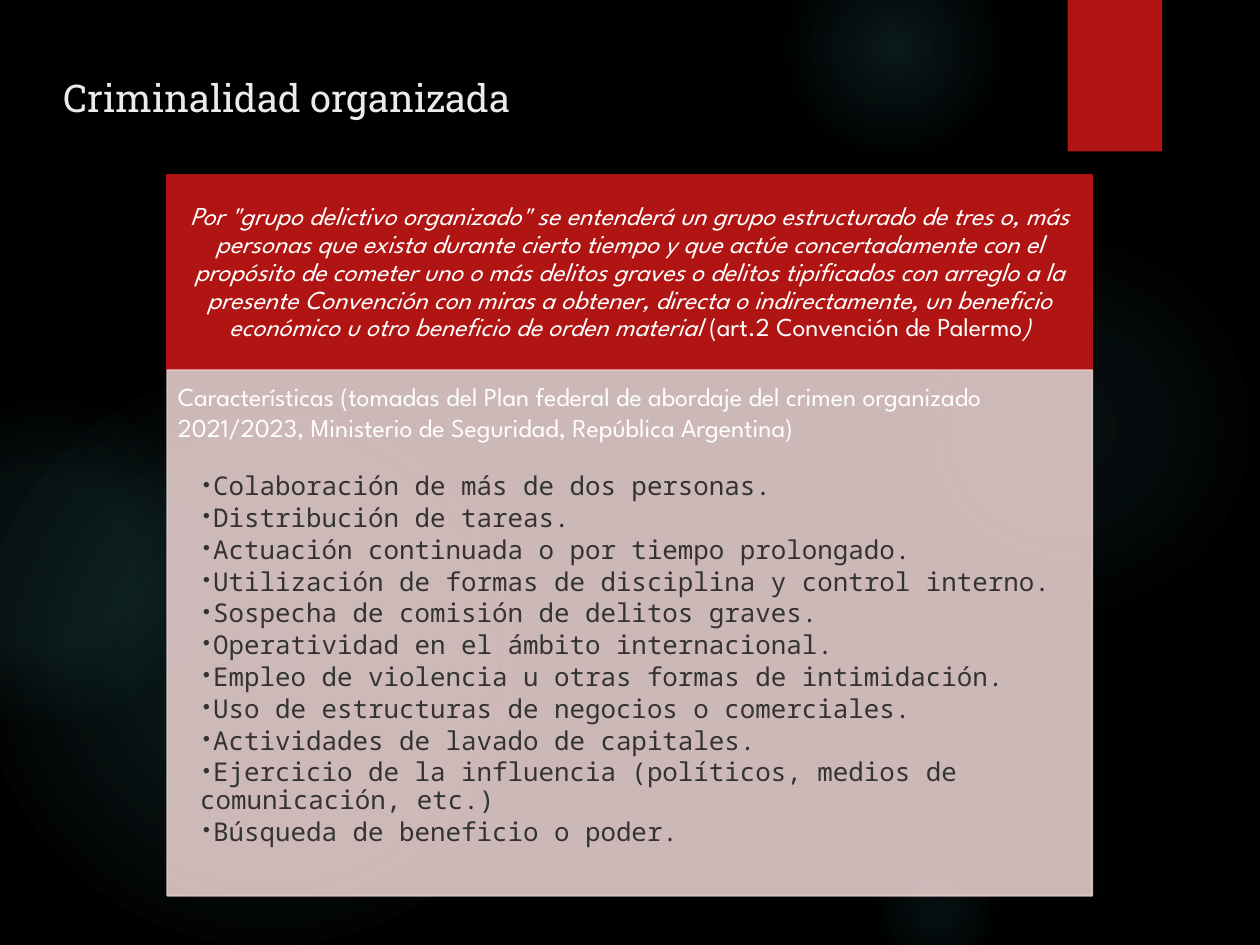
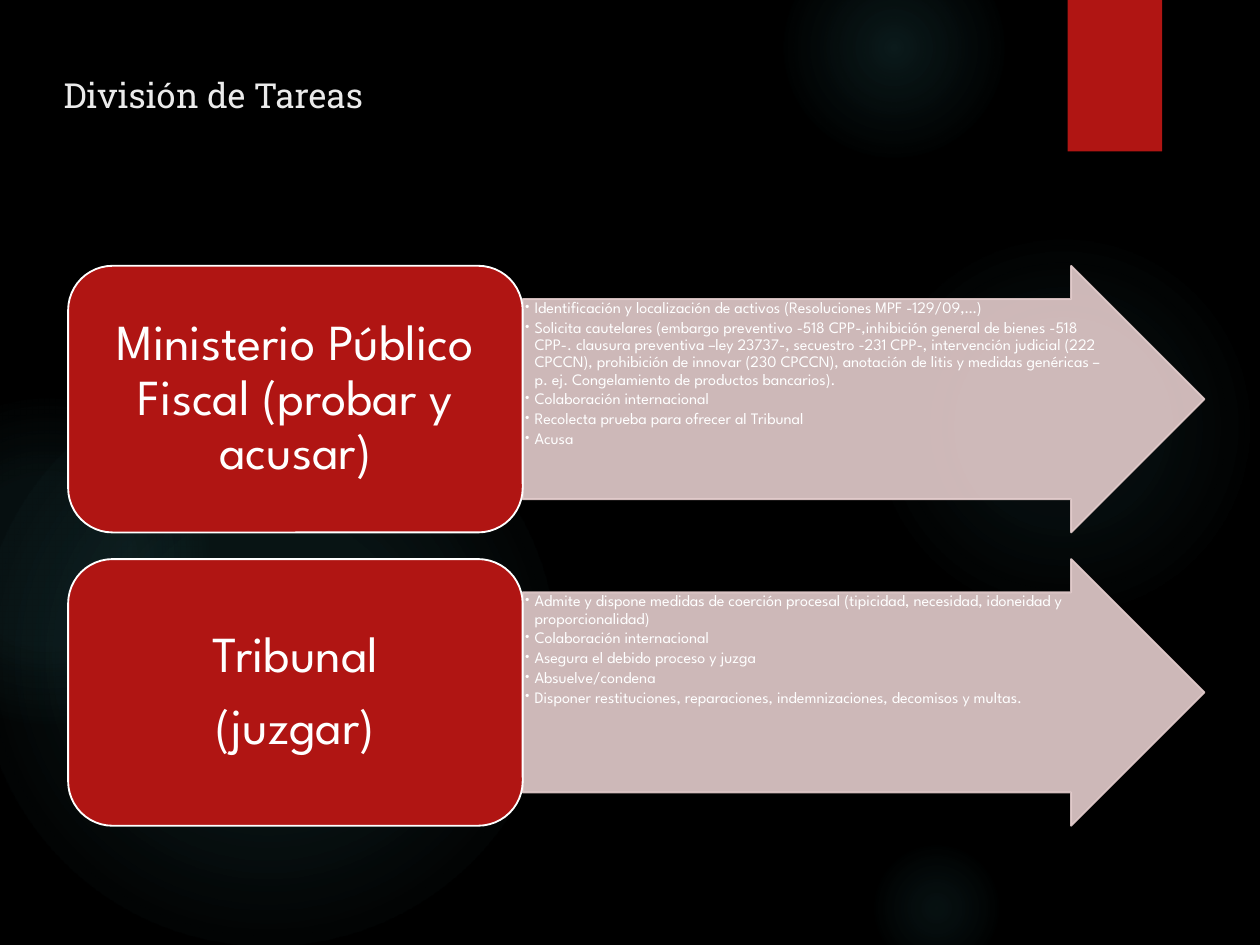
from pptx import Presentation
from pptx.dml.color import RGBColor
from pptx.enum.shapes import MSO_SHAPE
from pptx.enum.text import MSO_ANCHOR, PP_ALIGN
from pptx.oxml import parse_xml
from pptx.oxml.ns import nsdecls, qn
from pptx.oxml.xmlchemy import OxmlElement
from pptx.util import Pt

RECT, ROUNDED = MSO_SHAPE.RECTANGLE, MSO_SHAPE.ROUNDED_RECTANGLE
ELLIPSE, ARROW = MSO_SHAPE.OVAL, MSO_SHAPE.RIGHT_ARROW
TOP, MIDDLE = MSO_ANCHOR.TOP, MSO_ANCHOR.MIDDLE
LEFT, CENTER = PP_ALIGN.LEFT, PP_ALIGN.CENTER

BLACK, RED, PINK, TEAL = "000000", "B01513", "E4CCCC", "50B9C1"
WHITE, TITLE_GREY, DARK = "FFFFFF", "EBEBEB", "333333"
SPARTAN, MONO, SLAB = "League Spartan", "Noto Sans Mono", "Roboto Slab"

GLOWS = [
    (705.6, 188, 316, [(0, 7), (36, 6), (69, 0)]),
    (637, -51, 179, [(0, 14), (36, 7), (73, 0)]),
    (705.6, 682.6, 111, [(0, 9), (36, 5), (66, 0)]),
    (-17, 299, 469.5, [(0, 11), (36, 10), (75, 0)]),
    (-94, 324, 264, [(0, 8), (36, 8), (72, 0)]),
]

DEFINITION = [
    ('Por "grupo delictivo organizado" se entenderá un grupo estructurado de tres o, más '
     "personas que exista durante cierto tiempo y que actúe concertadamente con el propósito "
     "de cometer uno o más delitos graves o delitos tipificados con arreglo a la presente "
     "Convención con miras a obtener, directa o indirectamente, un beneficio económico u otro "
     "beneficio de orden material ", True),
    ("(art.2 Convención de Palermo", False),
    (")", True),
]
FEATURES_HEADING = ("Características (tomadas del Plan federal de abordaje del crimen organizado "
                    "2021/2023, Ministerio de Seguridad, República Argentina)")
FEATURES = [
    "Colaboración de más de dos personas.",
    "Distribución de tareas.",
    "Actuación continuada o por tiempo prolongado.",
    "Utilización de formas de disciplina y control interno.",
    "Sospecha de comisión de delitos graves.",
    "Operatividad en el ámbito internacional.",
    "Empleo de violencia u otras formas de intimidación.",
    "Uso de estructuras de negocios o comerciales.",
    "Actividades de lavado de capitales.",
    "Ejercicio de la influencia (políticos, medios de comunicación, etc.)",
    "Búsqueda de beneficio o poder.",
]
ROLES = [
    (["Ministerio Público Fiscal (probar y acusar)"], [
        "Identificación y localización de activos (Resoluciones MPF -129/09,…)",
        "Solicita cautelares (embargo preventivo -518 CPP-,inhibición general de bienes -518 "
        "CPP-. clausura preventiva –ley 23737-, secuestro -231 CPP-, intervención judicial "
        "(222 CPCCN), prohibición de innovar (230 CPCCN), anotación de litis y medidas "
        "genéricas –p. ej. Congelamiento de productos bancarios).",
        "Colaboración internacional",
        "Recolecta prueba para ofrecer al Tribunal",
        "Acusa",
    ]),
    (["Tribunal", "(juzgar)"], [
        "Admite y dispone medidas de coerción procesal (tipicidad, necesidad, idoneidad y "
        "proporcionalidad)",
        "Colaboración internacional",
        "Asegura el debido proceso y juzga",
        "Absuelve/condena",
        "Disponer restituciones, reparaciones, indemnizaciones, decomisos y multas.",
    ]),
]


def rgb(value):
    return RGBColor.from_string(value)


class Deck:
    def __init__(self):
        self.prs = Presentation()
        self.prs.slide_width, self.prs.slide_height = Pt(1024), Pt(768)
        self.s = None

    def slide(self, title, size):
        self.s = self.prs.slides.add_slide(self.prs.slide_layouts[6])
        self.s.background.fill.solid()
        self.s.background.fill.fore_color.rgb = rgb(BLACK)
        for x, y, d, stops in GLOWS:
            self.glow(x, y, d, stops)
        self.shape(RECT, 867.6, 0, 77, 123, RED)
        sp = self.s.shapes.add_textbox(Pt(44.6), Pt(57), Pt(934), Pt(57))
        self.frame(sp, TOP, (7.2, 3.6, 7.2, 3.6))
        self.para(sp, [(title, None)], size, TITLE_GREY, SLAB)

    def glow(self, x, y, d, stops):
        sp = self.shape(ELLIPSE, x, y, d, d)
        gs = "".join(
            f'<a:gs pos="{pos * 1000}"><a:srgbClr val="{TEAL}">'
            f'<a:alpha val="{alpha * 1000}"/></a:srgbClr></a:gs>' for pos, alpha in stops)
        grad = parse_xml(
            f'<a:gradFill {nsdecls("a")} rotWithShape="1"><a:gsLst>{gs}</a:gsLst>'
            '<a:path path="circle"><a:fillToRect l="50000" t="50000" r="50000" b="50000"/>'
            "</a:path></a:gradFill>")
        spPr = sp._element.spPr
        spPr.replace(spPr.find(qn("a:noFill")), grad)

    def shape(self, kind, x, y, w, h, fill=None, line=None, alpha=None):
        sp = self.s.shapes.add_shape(kind, Pt(x), Pt(y), Pt(w), Pt(h))
        sp.shadow.inherit = False
        if fill:
            sp.fill.solid()
            sp.fill.fore_color.rgb = rgb(fill)
        else:
            sp.fill.background()
        if line:
            sp.line.color.rgb = rgb(line)
            sp.line.width = Pt(1.5)
        else:
            sp.line.fill.background()
        if alpha:
            for clr in sp._element.spPr.iter(qn("a:srgbClr")):
                node = OxmlElement("a:alpha")
                node.set("val", str(alpha * 1000))
                clr.append(node)
        return sp

    def frame(self, sp, anchor, margins):
        tf = sp.text_frame
        tf.word_wrap = True
        tf.vertical_anchor = anchor
        tf.margin_left, tf.margin_top, tf.margin_right, tf.margin_bottom = map(Pt, margins)

    def para(self, sp, runs, size, color, font=SPARTAN, align=LEFT, spacing=None, after=0):
        tf = sp.text_frame
        p = tf.paragraphs[0] if not tf.paragraphs[0].runs else tf.add_paragraph()
        p.alignment = align
        p.space_after = Pt(after)
        if spacing:
            p.line_spacing = spacing
        p.font.size, p.font.name = Pt(size), font
        p.font.color.rgb = rgb(color)
        for text, italic in runs:
            r = p.add_run()
            r.text = text
            if italic is not None:
                r.font.italic = italic
        return p

    def bullets(self, sp, items, size, color, font, left, indent):
        for item in items:
            p = self.para(sp, [(item, None)], size, color, font, LEFT, 0.9, 0.15 * size)
            pPr = p._p.get_or_add_pPr()
            pPr.set("marL", str(Pt(left)))
            pPr.set("indent", str(Pt(indent)))
            defaults = pPr.find(qn("a:defRPr"))
            for tag, key, value in (("a:buFont", "typeface", SPARTAN), ("a:buChar", "char", "•")):
                node = OxmlElement(tag)
                node.set(key, value)
                defaults.addprevious(node)

    def save(self):
        self.prs.save("out.pptx")


def main():
    deck = Deck()

    deck.slide("Criminalidad organizada", 31)
    x, y, w, h = 136, 142.5, 751.7, 158.4
    definition = deck.shape(RECT, x, y, w, h, RED, RED)
    deck.frame(definition, MIDDLE, (11.5, 6.5, 11.5, 6.5))
    deck.para(definition, DEFINITION, 21, WHITE, align=CENTER, spacing=0.9, after=7.35)
    features = deck.shape(RECT, x, y + h, w, 427, PINK, PINK, 90)
    deck.frame(features, TOP, (8.6, 8.6, 11.5, 13))
    deck.para(features, [(FEATURES_HEADING, None)], 21, WHITE, after=25)
    deck.bullets(features, FEATURES, 21, DARK, MONO, 18, 0)

    deck.slide("División de Tareas", 28)
    x, y, w, h = 55.4, 216, 369.4, 216.7
    for i, (names, tasks) in enumerate(ROLES):
        top = y + i * h * 1.1
        arrow = deck.shape(ARROW, x + w, top, w * 1.5, h, PINK, PINK, 90)
        arrow.adjustments[0], arrow.adjustments[1] = 0.75, 0.5
        deck.frame(arrow, TOP, (0.6, 0.6, 0.6, 0.6))
        deck.bullets(arrow, tasks, 13, WHITE, SPARTAN, 9, -9)
        role = deck.shape(ROUNDED, x, top, w, h, RED, WHITE)
        deck.frame(role, MIDDLE, (12.3, 6.2, 12.3, 6.2))
        for name in names:
            deck.para(role, [(name, None)], 41, WHITE, align=CENTER, spacing=0.9, after=14.35)

    deck.save()


if __name__ == "__main__":
    main()
